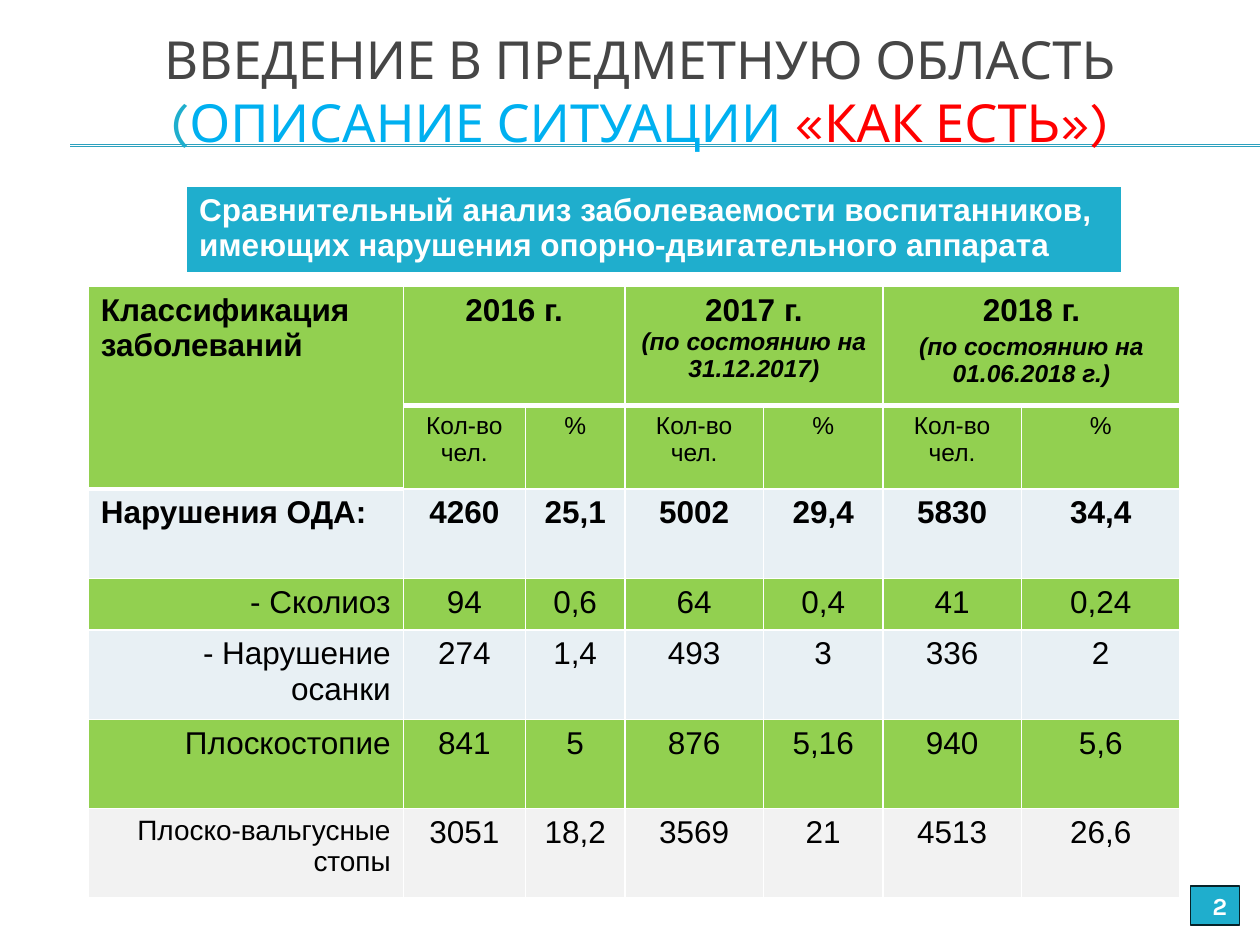
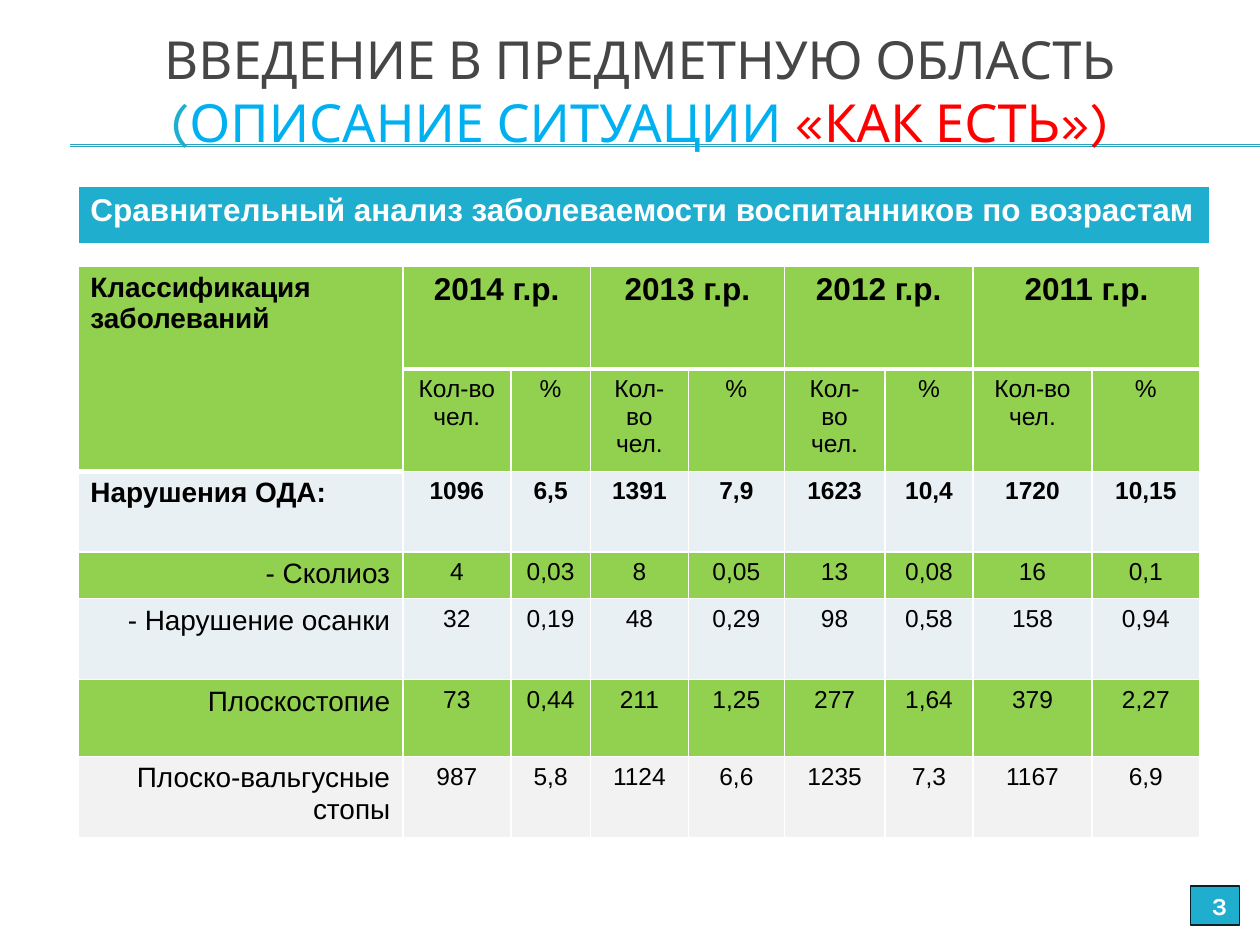
from lxml.etree import SubElement
from pptx import Presentation
from pptx.dml.color import RGBColor
from pptx.enum.shapes import MSO_CONNECTOR, MSO_SHAPE
from pptx.enum.text import MSO_ANCHOR, MSO_AUTO_SIZE, PP_ALIGN as Align
from pptx.oxml.ns import qn
from pptx.util import Cm, Pt

WHITE = RGBColor(0xFF, 0xFF, 0xFF)
BLACK = RGBColor(0x00, 0x00, 0x00)
GREY = RGBColor(0x46, 0x46, 0x46)
TEAL = RGBColor(0x1F, 0xAE, 0xCD)
RULE_TEAL = RGBColor(0x2D, 0xA2, 0xBF)
NUMBER_EDGE = RGBColor(0x06, 0x23, 0x29)
BLUE = RGBColor(0x00, 0xB0, 0xF0)
RED = RGBColor(0xFF, 0x00, 0x00)
GREEN = RGBColor(0x92, 0xD0, 0x50)
PALE_BLUE = RGBColor(0xE8, 0xF0, 0xF4)
PALE_GREY = RGBColor(0xF2, 0xF2, 0xF2)

TITLE_FONT = "Karla"
TABLE_FONT = "Arial"
ROW_FILLS = [GREEN, GREEN, PALE_BLUE, GREEN, PALE_BLUE, GREEN, PALE_GREY]
DISEASES = ["Нарушения ОДА:", "- Сколиоз", "- Нарушение осанки",
            "Плоскостопие", "Плоско-вальгусные стопы"]

PAGES = [
    {
        "number": "2",
        "caption": "Сравнительный анализ заболеваемости воспитанников, "
                   "имеющих нарушения опорно-двигательного аппарата",
        "caption_box": (3.76, 3.76, 18.85, 1.78),
        "corner": (1.78, 5.77),
        "widths": [6.35, 2.46, 2.01, 2.79, 2.41, 2.79, 3.2],
        "heights": [2.41, 1.68, 1.8, 1.04, 1.8, 1.8, 1.8],
        "years": [("2016 г.", "", 0),
                  ("2017 г.", "(по состоянию на 31.12.2017)", 0),
                  ("2018 г.", "(по состоянию на 01.06.2018 г.)", 3)],
        "heading_size": 18,
        "label_sizes": [18, 18, 18, 18, 16],
        "value_size": 18,
        "values": ["4260 25,1 5002 29,4 5830 34,4",
                   "94 0,6 64 0,4 41 0,24",
                   "274 1,4 493 3 336 2",
                   "841 5 876 5,16 940 5,6",
                   "3051 18,2 3569 21 4513 26,6"],
    },
    {
        "number": "3",
        "caption": "Сравнительный анализ заболеваемости воспитанников по возрастам",
        "caption_box": (1.57, 3.76, 22.81, 1.19),
        "corner": (1.57, 5.36),
        "widths": [6.55, 2.18, 1.6, 1.98, 1.93, 2.03, 1.78, 2.39, 2.18],
        "heights": [2.08, 2.06, 1.63, 0.94, 1.63, 1.55, 1.63],
        "years": [(f"{year} г.р.", "", 0) for year in (2014, 2013, 2012, 2011)],
        "heading_size": 16,
        "label_sizes": [16] * 5,
        "value_size": 14,
        "values": ["1096 6,5 1391 7,9 1623 10,4 1720 10,15",
                   "4 0,03 8 0,05 13 0,08 16 0,1",
                   "32 0,19 48 0,29 98 0,58 158 0,94",
                   "73 0,44 211 1,25 277 1,64 379 2,27",
                   "987 5,8 1124 6,6 1235 7,3 1167 6,9"],
    },
]


def add_span(para, text, size, color=BLACK, bold=False, italic=False, font=TABLE_FONT):
    span = para.add_run()
    span.text = text
    span.font.name = font
    span.font.size = Pt(size)
    span.font.color.rgb = color
    span.font.bold = bold
    span.font.italic = italic


def add_grid(slide, left, top, widths, heights, fills):
    """Add a table with white rules, thicker below the header cells."""
    table = slide.shapes.add_table(len(heights), len(widths), Cm(left), Cm(top),
                                   Cm(sum(widths)), Cm(sum(heights))).table
    table.first_row = table.horz_banding = False
    for column, width in zip(table.columns, widths):
        column.width = Cm(width)
    for row, (height, fill) in enumerate(zip(heights, fills)):
        table.rows[row].height = Cm(height)
        for col in range(len(widths)):
            cell = table.cell(row, col)
            under_header = row == 0 or (row, col) == (1, 0)
            for side in "LRTB" if row == 0 else "LRB":
                points = 3 if side == "B" and under_header else 1
                border = SubElement(cell._tc.get_or_add_tcPr(), qn(f"a:ln{side}"),
                                    w=str(Pt(points)))
                SubElement(SubElement(border, qn("a:solidFill")),
                           qn("a:srgbClr"), val=str(WHITE))
            cell.fill.solid()
            cell.fill.fore_color.rgb = fill
    return table


deck = Presentation()
deck.slide_width, deck.slide_height = Cm(25.4), Cm(19.05)

for page in PAGES:
    slide = deck.slides.add_slide(deck.slide_layouts[5])

    # Title with the double rule behind it
    title = slide.shapes.title
    title.left, title.top, title.width, title.height = Cm(0.84), Cm(1.27), Cm(24.13), Cm(2.34)
    frame = title.text_frame
    frame.auto_size = MSO_AUTO_SIZE.NONE
    frame.vertical_anchor = MSO_ANCHOR.MIDDLE
    frame.margin_bottom = Cm(1.37)
    para = frame.paragraphs[0]
    para.alignment = Align.CENTER
    add_span(para, "ВВЕДЕНИЕ В ПРЕДМЕТНУЮ ОБЛАСТЬ", 30, GREY, font=TITLE_FONT)
    para.add_line_break()
    for text, color in [("(", TEAL), ("ОПИСАНИЕ СИТУАЦИИ ", BLUE), ("«КАК ЕСТЬ»)", RED)]:
        add_span(para, text, 30, color, font=TITLE_FONT)

    for height in (2.92, 2.95):
        rule = slide.shapes.add_connector(MSO_CONNECTOR.STRAIGHT, Cm(1.42), Cm(height),
                                          deck.slide_width, Cm(height))
        rule.line.color.rgb = RULE_TEAL
        rule.line.width = Pt(0.75)
        SubElement(rule.element.spPr, qn("a:effectLst"))
        title.element.addprevious(rule.element)

    # Caption band
    left, top, width, height = page["caption_box"]
    caption = add_grid(slide, left, top, [width], [height], [TEAL])
    add_span(caption.cell(0, 0).text_frame.paragraphs[0], page["caption"], 18, WHITE, bold=True)

    # Disease table: headings
    table = add_grid(slide, *page["corner"], page["widths"], page["heights"], ROW_FILLS)
    table.cell(0, 0).merge(table.cell(1, 0))
    add_span(table.cell(0, 0).text_frame.paragraphs[0], "Классификация заболеваний",
             page["heading_size"], bold=True)
    for index, (year, note, gap) in enumerate(page["years"]):
        col = 1 + 2 * index
        table.cell(0, col).merge(table.cell(0, col + 1))
        frame = table.cell(0, col).text_frame
        para = frame.paragraphs[0]
        para.alignment = Align.CENTER
        add_span(para, year, 18, bold=True)
        if note:
            para = frame.add_paragraph()
            para.alignment = Align.CENTER
            para.space_before = Pt(gap)
            add_span(para, note, 14, bold=True, italic=True)
        for offset, unit in enumerate(["Кол-во чел.", "%"]):
            para = table.cell(1, col + offset).text_frame.paragraphs[0]
            para.alignment = Align.CENTER
            add_span(para, unit, 14)

    # Disease table: figures
    rows = zip(DISEASES, page["label_sizes"], page["values"])
    for row, (disease, label_size, values) in enumerate(rows, start=2):
        is_total = row == 2
        para = table.cell(row, 0).text_frame.paragraphs[0]
        para.alignment = Align.LEFT if is_total else Align.RIGHT
        add_span(para, disease, label_size, bold=is_total)
        for col, value in enumerate(values.split(), start=1):
            para = table.cell(row, col).text_frame.paragraphs[0]
            para.alignment = Align.CENTER
            add_span(para, value, page["value_size"], bold=is_total)

    # Page number
    box = slide.shapes.add_shape(MSO_SHAPE.RECTANGLE, Cm(24), Cm(17.86), Cm(0.99), Cm(0.79))
    box.shadow.inherit = False
    box.fill.solid()
    box.fill.fore_color.rgb = TEAL
    box.line.color.rgb = NUMBER_EDGE
    box.line.width = Pt(0.75)
    box.text_frame.vertical_anchor = MSO_ANCHOR.MIDDLE
    para = box.text_frame.paragraphs[0]
    para.alignment = Align.RIGHT
    add_span(para, page["number"], 14, WHITE, bold=True, font=TITLE_FONT)

deck.save("out.pptx")
